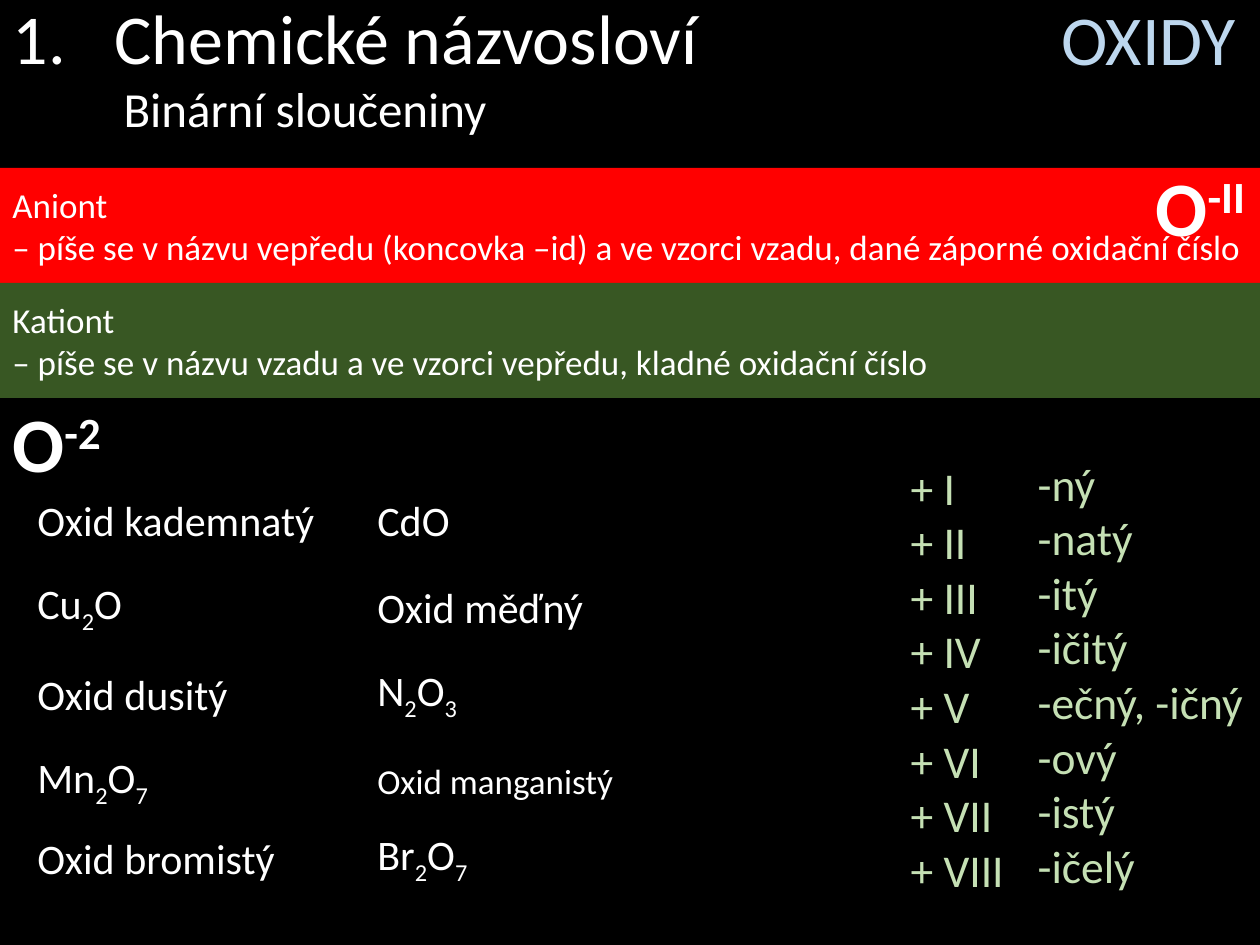
from itertools import groupby

from lxml.etree import SubElement
from pptx import Presentation
from pptx.dml.color import RGBColor
from pptx.enum.shapes import MSO_SHAPE
from pptx.enum.text import MSO_ANCHOR, MSO_AUTO_SIZE, PP_ALIGN
from pptx.oxml.ns import qn
from pptx.util import Pt

PX = 914400 / 126
BLACK = RGBColor(0x00, 0x00, 0x00)
WHITE = RGBColor(0xFF, 0xFF, 0xFF)
RED = RGBColor(0xFF, 0x00, 0x00)
DARK_GREEN = RGBColor(0x38, 0x57, 0x23)
LIGHT_GREEN = RGBColor(0xC5, 0xE0, 0xB4)
LIGHT_BLUE = RGBColor(0xBD, 0xD7, 0xEE)

CHARGES = ["+ I", "+ II", "+ III", "+ IV", "+ V", "+ VI", "+ VII", "+ VIII"]
ENDINGS = ["-ný", "-natý", "-itý", "-ičitý", "-ečný, -ičný", "-ový", "-istý", "-ičelý"]
QUESTIONS = ["Oxid kademnatý", "Cu2O", "Oxid dusitý", "Mn2O7", "Oxid bromistý"]
ANSWERS = ["CdO", "Oxid měďný", "N2O3", "Oxid manganistý", "Br2O7"]


def px(n):
    """Turn pixels into EMU."""
    return round(n * PX)


def place(sp, box):
    """Move a shape to a box given in pixels."""
    sp.left, sp.top, sp.width, sp.height = map(px, box)


def style(p, size, color, bold=False):
    """Left-align a paragraph and format its runs."""
    p.alignment = PP_ALIGN.LEFT
    p.space_before = Pt(0)
    for r in p.runs:
        r.font.name = "Calibri"
        r.font.size = Pt(size)
        r.font.bold = bold
        r.font.color.rgb = color


def shift(r, percent):
    """Raise or lower a run as superscript or subscript."""
    r._r.get_or_add_rPr().set("baseline", str(percent * 1000))


def set_indent(p, left, first, bullet):
    """Set the indents and the kind of bullet of a paragraph."""
    pPr = p._p.get_or_add_pPr()
    pPr.set("marL", str(px(left)))
    pPr.set("indent", str(px(first)))
    return SubElement(pPr, qn(bullet))


def fill_lines(sp, lines, size, color):
    """Write one paragraph for each line, centred vertically."""
    tf = sp.text_frame
    tf.word_wrap = True
    tf.auto_size = MSO_AUTO_SIZE.NONE
    tf.vertical_anchor = MSO_ANCHOR.MIDDLE
    tf.text = "\n".join(lines)
    for p in tf.paragraphs:
        style(p, size, color)


def add_box(slide, box, fill):
    """Add a plain filled rectangle."""
    sp = slide.shapes.add_shape(MSO_SHAPE.RECTANGLE, *map(px, box))
    sp.shadow.inherit = False
    sp.fill.solid()
    sp.fill.fore_color.rgb = fill
    sp.line.fill.background()
    return sp


def add_header(slide, box):
    """Place the numbered title, its subtitle and the topic on the right."""
    x, y, w, h = box
    sp = slide.shapes.title
    place(sp, box)
    fill_lines(sp, ["Chemické názvosloví", "Binární sloučeniny"], 40, WHITE)
    tf = sp.text_frame
    tf.margin_top, tf.margin_bottom = 0, px(76)
    title, subtitle = tf.paragraphs
    set_indent(title, 102, -102, "a:buAutoNum").set("type", "arabicPeriod")
    set_indent(subtitle, 111, 0, "a:buNone")
    style(subtitle, 28, WHITE)
    topic = slide.shapes.add_textbox(*map(px, (x + w - 252, y, 240, 76)))
    fill_lines(topic, ["OXIDY"], 40, LIGHT_BLUE)
    topic.text_frame.paragraphs[0].alignment = PP_ALIGN.RIGHT


def add_ion_bar(slide, box, fill, name, rule):
    """Place a coloured bar with the rule for one ion."""
    fill_lines(add_box(slide, box, fill), [name, rule], 20, WHITE)


def add_oxide_ion(slide, box, charge):
    """Place the bold oxide symbol with its raised charge."""
    sp = slide.shapes.add_textbox(*map(px, box))
    tf = sp.text_frame
    tf.word_wrap = False
    tf.vertical_anchor = MSO_ANCHOR.MIDDLE
    p = tf.paragraphs[0]
    for text in ("O", charge):
        p.add_run().text = text
    style(p, 44, WHITE, bold=True)
    shift(p.runs[1], 30)


def add_list(sp, box, items):
    """Turn a body placeholder into a plain green list."""
    place(sp, box)
    fill_lines(sp, items, 26, LIGHT_GREEN)
    for p in sp.text_frame.paragraphs:
        set_indent(p, 0, 0, "a:buNone")


def add_compounds(slide, box, compounds):
    """Stack compounds in rows, lowering the digits of formulas."""
    x, y, w, h = box
    row = 87
    for i, compound in enumerate(compounds):
        top = min(y + i * row, y + h - row)
        sp = add_box(slide, (x, top, w, row), BLACK)
        fill_lines(sp, [""], 24, WHITE)
        p = sp.text_frame.paragraphs[0]
        for is_digit, chars in groupby(compound, str.isdigit):
            r = p.add_run()
            r.text = "".join(chars)
            if is_digit:
                shift(r, -25)
        style(p, 20 if len(compound) > 14 else 24, WHITE)


def main():
    """Build the slide and save it."""
    prs = Presentation()
    prs.slide_width, prs.slide_height = px(1260), px(945)
    slide = prs.slides.add_slide(prs.slide_layouts[3])
    slide.background.fill.solid()
    slide.background.fill.fore_color.rgb = BLACK
    add_header(slide, (0, 0, 1260, 208))
    add_ion_bar(slide, (0, 168, 1268, 115), RED, "Aniont",
                "– píše se v názvu vepředu (koncovka –id) a ve vzorci vzadu, "
                "dané záporné oxidační číslo")
    add_ion_bar(slide, (0, 283, 1268, 115), DARK_GREEN, "Kationt",
                "– píše se v názvu vzadu a ve vzorci vepředu, kladné oxidační číslo")
    add_list(slide.placeholders[1], (898, 455, 180, 446), CHARGES)
    add_list(slide.placeholders[2], (1025, 451, 235, 446), ENDINGS)
    add_oxide_ion(slide, (1143, 144, 117, 123), "-II")
    add_oxide_ion(slide, (0, 384, 136, 115), "-2")
    add_compounds(slide, (25, 476, 467, 425), QUESTIONS)
    add_compounds(slide, (365, 476, 265, 425), ANSWERS)
    prs.save("out.pptx")


if __name__ == "__main__":
    main()
